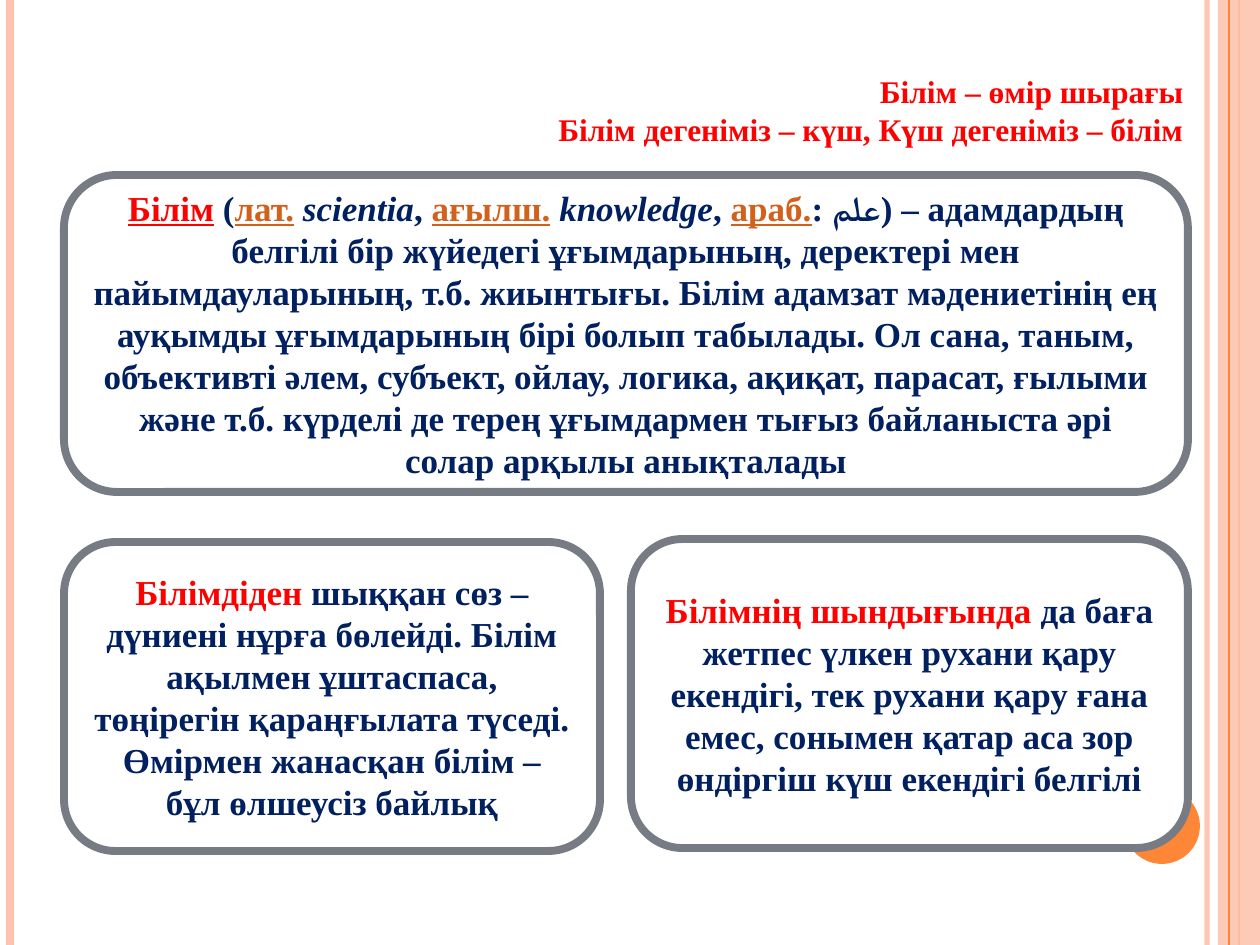
from dataclasses import dataclass
from typing import Optional

from lxml.etree import SubElement
from pptx import Presentation
from pptx.dml.color import RGBColor
from pptx.enum.shapes import MSO_CONNECTOR, MSO_SHAPE
from pptx.enum.text import MSO_ANCHOR, MSO_AUTO_SIZE, PP_ALIGN
from pptx.oxml.ns import qn
from pptx.util import Emu, Pt

HUES = {
    "white": "FFFFFF",
    "peach": "FEC3AE",
    "orange": "FE8637",
    "gray": "777C84",
    "red": "FF0000",
    "navy": "002060",
    "link": "D2611C",
}
FONT = "Times New Roman"
WIDE, HIGH = 1260, 945


@dataclass(frozen=True)
class Box:
    left: int
    top: int
    width: int
    height: int


@dataclass(frozen=True)
class Rule:
    left: int
    weight: float
    hue: str
    alpha: int = 100


@dataclass(frozen=True)
class Run:
    text: str
    hue: str = "navy"
    under: bool = False
    slant: bool = False


@dataclass(frozen=True)
class Card:
    box: Box
    runs: tuple[Run, ...]


RULES = (
    Rule(1207, 3, "peach", 93),
    Rule(10, 4.5, "peach"),
    Rule(1229, 0.75, "orange"),
)
AXIS = Rule(1239, 1.5, "orange")
BAND = Box(1218, 0, 42, HIGH)
DOT = Box(1124, 788, 76, 76)
HEAD = Box(64, 66, 1132, 89)
LINES = (
    "Білім – өмір шырағы",
    "Білім дегеніміз – күш, Күш дегеніміз – білім",
)
CARDS = (
    Card(Box(64, 175, 1124, 317), (
        Run("Білім", "red", under=True),
        Run(" ("),
        Run("лат.", "link", under=True),
        Run(" "),
        Run("scientia", slant=True),
        Run(", "),
        Run("ағылш.", "link", under=True),
        Run(" "),
        Run("knowledge", slant=True),
        Run(", "),
        Run("араб.", "link", under=True),
        Run(": علم) – адамдардың белгілі бір жүйедегі ұғымдарының, "
            "деректері мен пайымдауларының, т.б. жиынтығы. Білім адамзат "
            "мәдениетінің ең ауқымды ұғымдарының бірі болып табылады. "
            "Ол сана, таным, объективті әлем, субъект, ойлау, логика, "
            "ақиқат, парасат, ғылыми және т.б. күрделі де терең "
            "ұғымдармен тығыз байланыста әрі солар арқылы анықталады"),
    )),
    Card(Box(631, 539, 557, 309), (
        Run("Білімнің шындығында ", "red"),
        Run("да баға жетпес үлкен рухани қару екендігі, тек рухани қару "
            "ғана емес, сонымен қатар аса зор өндіргіш күш екендігі белгілі"),
    )),
    Card(Box(64, 542, 536, 309), (
        Run("Білімдіден", "red"),
        Run(" шыққан сөз – дүниені нұрға бөлейді. Білім ақылмен "
            "ұштаспаса, төңірегін қараңғылата түседі. Өмірмен жанасқан "
            "білім – бұл өлшеусіз байлық"),
    )),
)


def px(num: int) -> Emu:
    return Emu(round(num * 914400 / 126))


def place(box: Box) -> tuple[Emu, ...]:
    return px(box.left), px(box.top), px(box.width), px(box.height)


def tint(fill, hue: str, alpha: int = 100) -> None:
    fill.solid()
    fill.fore_color.rgb = RGBColor.from_string(HUES[hue])
    if alpha < 100:
        for node in fill._xPr.iter(qn("a:srgbClr")):
            SubElement(node, qn("a:alpha"), val=str(alpha * 1000))


def write(para, text: str, *, hue: str, size: int,
          under: bool = False, slant: bool = False) -> None:
    run = para.add_run()
    run.text = text
    font = run.font
    font.name = FONT
    font.size = Pt(size)
    font.bold = True
    font.italic = slant
    font.underline = under
    font.color.rgb = RGBColor.from_string(HUES[hue])


def draw_rule(slide, rule: Rule):
    line = slide.shapes.add_connector(
        MSO_CONNECTOR.STRAIGHT, px(rule.left), 0, px(rule.left), px(HIGH))
    line.line.width = Pt(rule.weight)
    tint(line.line.fill, rule.hue, rule.alpha)
    SubElement(line._element.spPr, qn("a:effectLst"))
    return line


def draw_shape(slide, kind: MSO_SHAPE, box: Box, hue: str,
               alpha: int = 100, edge: Optional[str] = None):
    shape = slide.shapes.add_shape(kind, *place(box))
    shape.shadow.inherit = False
    tint(shape.fill, hue, alpha)
    if edge:
        tint(shape.line.fill, edge)
        shape.line.width = Pt(4.5)
    else:
        shape.line.fill.background()
    return shape


def draw_card(slide, card: Card) -> None:
    shape = draw_shape(slide, MSO_SHAPE.ROUNDED_RECTANGLE, card.box,
                       "white", edge="gray")
    frame = shape.text_frame
    frame.word_wrap = True
    frame.vertical_anchor = MSO_ANCHOR.MIDDLE
    para = frame.paragraphs[0]
    para.alignment = PP_ALIGN.CENTER
    for run in card.runs:
        write(para, run.text, hue=run.hue, size=20,
              under=run.under, slant=run.slant)


def draw_title(slide) -> None:
    title = slide.shapes.title
    title.left, title.top, title.width, title.height = place(HEAD)
    frame = title.text_frame
    frame.word_wrap = True
    frame.auto_size = MSO_AUTO_SIZE.NONE
    frame.vertical_anchor = MSO_ANCHOR.TOP
    for num, text in enumerate(LINES):
        para = frame.add_paragraph() if num else frame.paragraphs[0]
        para.alignment = PP_ALIGN.RIGHT
        write(para, text, hue="red", size=18)


def main() -> None:
    deck = Presentation()
    deck.slide_width, deck.slide_height = px(WIDE), px(HIGH)
    slide = deck.slides.add_slide(deck.slide_layouts[5])
    draw_title(slide)
    axis = draw_rule(slide, AXIS)
    band = draw_shape(slide, MSO_SHAPE.RECTANGLE, BAND, "peach", 87)
    axis.begin_connect(band, 0)
    axis.end_connect(band, 2)
    for rule in RULES:
        draw_rule(slide, rule)
    draw_shape(slide, MSO_SHAPE.OVAL, DOT, "orange")
    for card in CARDS:
        draw_card(slide, card)
    deck.save("out.pptx")


if __name__ == "__main__":
    main()
